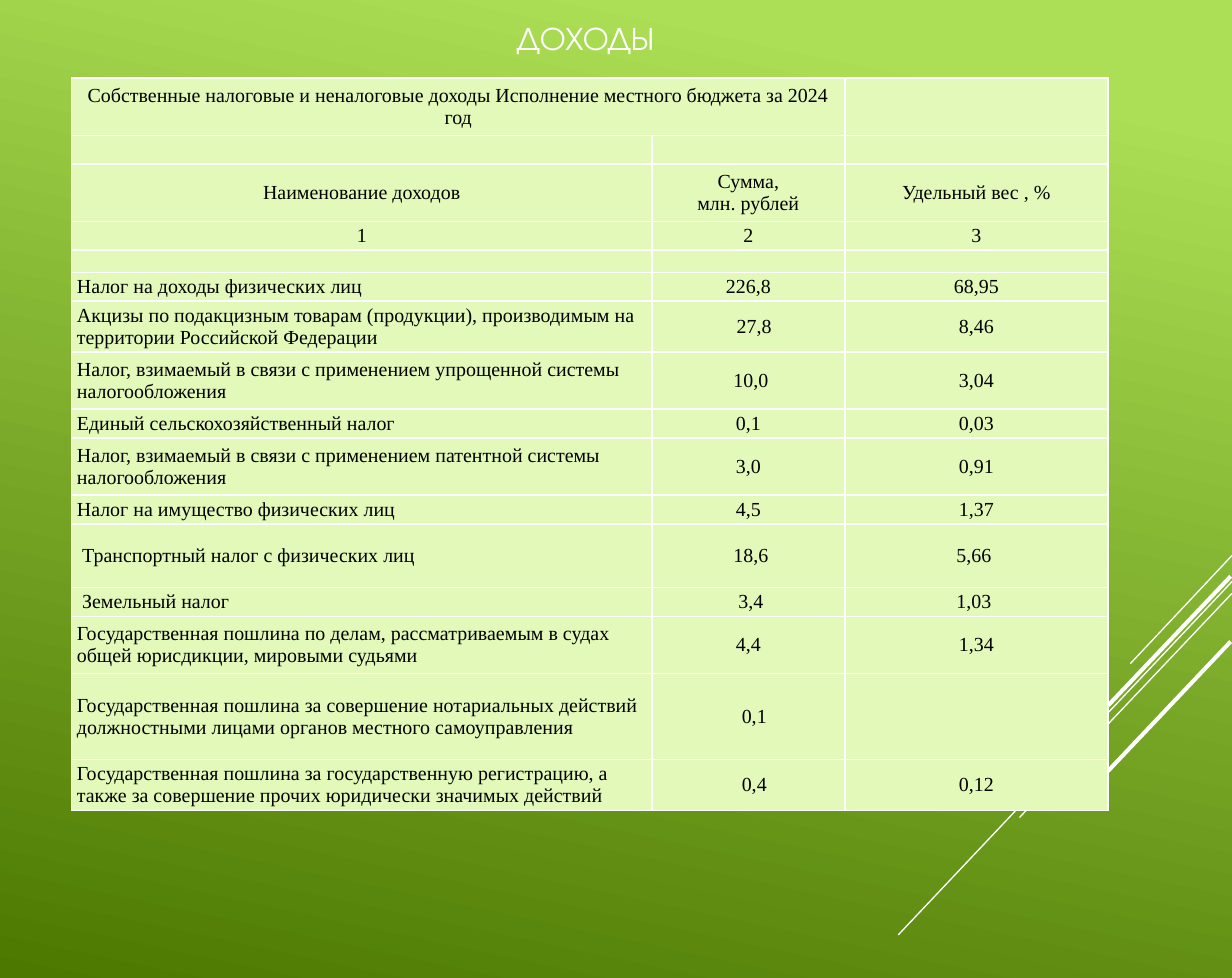
import dataclasses

import lxml.etree
import pptx
import pptx.dml.color
import pptx.enum.shapes
import pptx.enum.text
import pptx.oxml.ns
import pptx.util

Inches = pptx.util.Inches
Pt = pptx.util.Pt
ALIGN = pptx.enum.text.PP_ALIGN
MIDDLE = pptx.enum.text.MSO_ANCHOR.MIDDLE
qn = pptx.oxml.ns.qn


def rgb(value):
    return pptx.dml.color.RGBColor.from_string(value)


@dataclasses.dataclass(frozen=True)
class Theme:
    white: str = "FFFFFF"
    text: str = "000000"
    cell: str = "E2F9BA"
    light_green: str = "ACDF55"
    dark_green: str = "4C7800"
    title_font: str = "TeX Gyre Adventor"
    table_font: str = "Times New Roman"
    title_size: int = 18
    table_size: int = 11
    empty_size: int = 8


THEME = Theme()

COLUMN_WIDTHS = (4.45, 1.48, 2.02)
HEADER_ROWS = 5

# Row height, income name, sum, share
INCOME_ROWS = (
    (0.44, "Собственные налоговые и неналоговые доходы Исполнение местного бюджета за 2024 год", "", ""),
    (0.22, "", "", ""),
    (0.44, "Наименование доходов", "Сумма,\nмлн. рублей", "Удельный вес , %"),
    (0.22, "1", "2", "3"),
    (0.17, "", "", ""),
    (0.22, "Налог на доходы физических лиц", "226,8", "68,95"),
    (0.39, "Акцизы по подакцизным товарам (продукции), производимым на территории Российской Федерации", "27,8", "8,46"),
    (0.44, "Налог, взимаемый в связи с применением упрощенной системы налогообложения", "10,0", "3,04"),
    (0.22, "Единый сельскохозяйственный налог", "0,1", "0,03"),
    (0.44, "Налог, взимаемый в связи с применением патентной системы налогообложения", "3,0", "0,91"),
    (0.22, "Налог на имущество физических лиц", "4,5", "1,37"),
    (0.49, "Транспортный налог с физических лиц", "18,6", "5,66"),
    (0.22, "Земельный налог", "3,4", "1,03"),
    (0.44, "Государственная пошлина по делам, рассматриваемым в судах общей юрисдикции, мировыми судьями", "4,4", "1,34"),
    (0.66, "Государственная пошлина за совершение нотариальных действий должностными лицами органов местного самоуправления", "0,1", ""),
    (0.39, "Государственная пошлина за государственную регистрацию, а также за совершение прочих юридически значимых действий", "0,4", "0,12"),
)

# Left and right insets of cells set off from their column
NAME_INSET = (0.04, 0)
CELL_INSETS = {
    (7, 1): (0.04, 0),
    (11, 0): (0.08, 0), (11, 1): (0.04, 0), (11, 2): (0, 0.04),
    (12, 0): (0.08, 0), (12, 1): (0.04, 0), (12, 2): (0, 0.04),
}
# Sums that start at a fixed indent instead of being centred
SUM_INDENTS = {6: 0.65, 14: 0.69, 15: 0.69}

# Diagonal rays relative to the corner box: start x, y, end x, y, weight
RAYS = (
    (2.56, 0, 1.78, 0.83, 0.75),
    (2.56, 0.2, 0, 2.91, 0.75),
    (2.56, 0.29, 0.93, 2.01, 0.75),
    (2.55, 0.16, 1.06, 1.73, 2.25),
    (2.55, 0.66, 1.47, 1.8, 2.25),
)


def paint_background(slide):
    fill = slide.background.fill
    fill.gradient()
    fill.gradient_angle = 258
    stops = ((0.1, THEME.light_green), (1, THEME.dark_green))
    for stop, (position, color) in zip(fill.gradient_stops, stops):
        stop.position = position
        stop.color.rgb = rgb(color)


def draw_rays(slide, left, top):
    for x1, y1, x2, y2, weight in RAYS:
        ray = slide.shapes.add_connector(
            pptx.enum.shapes.MSO_CONNECTOR.STRAIGHT,
            Inches(left + x1), Inches(top + y1), Inches(left + x2), Inches(top + y2))
        ray.line.color.rgb = rgb(THEME.white)
        ray.line.width = Pt(weight)
        lxml.etree.SubElement(ray._element.spPr, qn("a:effectLst"))


def add_text(paragraph, text, font_name, size, color):
    for index, line in enumerate(text.split("\n")):
        if index:
            paragraph.add_line_break()
        run = paragraph.add_run()
        run.text = line
        run.font.name = font_name
        run.font.size = Pt(size)
        run.font.color.rgb = rgb(color)


def place_title(slide, left, top, width, height):
    title = slide.shapes.title
    title.left, title.top = Inches(left), Inches(top)
    title.width, title.height = Inches(width), Inches(height)
    frame = title.text_frame
    frame.word_wrap = True
    frame.vertical_anchor = MIDDLE
    frame.paragraphs[0].alignment = ALIGN.CENTER
    add_text(frame.paragraphs[0], "ДОХОДЫ", THEME.title_font, THEME.title_size, THEME.white)


def add_borders(cell):
    properties = cell._tc.get_or_add_tcPr()
    for index, side in enumerate(("a:lnL", "a:lnR", "a:lnT", "a:lnB")):
        border = lxml.etree.Element(qn(side), w=str(Pt(1)))
        solid = lxml.etree.SubElement(border, qn("a:solidFill"))
        lxml.etree.SubElement(solid, qn("a:srgbClr"), val=THEME.white)
        properties.insert(index, border)


def fill_cell(cell, row, column, text):
    cell.fill.solid()
    cell.fill.fore_color.rgb = rgb(THEME.cell)
    add_borders(cell)
    cell.vertical_anchor = MIDDLE
    is_name = column == 0 and row >= HEADER_ROWS
    is_indented = column == 1 and row in SUM_INDENTS
    left, right = CELL_INSETS.get((row, column), NAME_INSET if is_name else (0, 0))
    if is_indented:
        left = SUM_INDENTS[row]
    cell.margin_left, cell.margin_right = Inches(left), Inches(right)
    cell.margin_top = cell.margin_bottom = 0
    paragraph = cell.text_frame.paragraphs[0]
    paragraph.alignment = ALIGN.LEFT if is_name or is_indented else ALIGN.CENTER
    if text:
        add_text(paragraph, text, THEME.table_font, THEME.table_size, THEME.text)
    else:
        lxml.etree.SubElement(paragraph._p, qn("a:endParaRPr"), sz=str(THEME.empty_size * 100))


def build_income_table(slide, left, top):
    heights = [row[0] for row in INCOME_ROWS]
    income = slide.shapes.add_table(
        len(INCOME_ROWS), len(COLUMN_WIDTHS), Inches(left), Inches(top),
        Inches(sum(COLUMN_WIDTHS)), Inches(sum(heights))).table
    income.first_row = False
    income.horz_banding = False
    for column, width in zip(income.columns, COLUMN_WIDTHS):
        column.width = Inches(width)
    for row, (height, *texts) in enumerate(INCOME_ROWS):
        income.rows[row].height = Inches(height)
        for column, text in enumerate(texts):
            fill_cell(income.cell(row, column), row, column, text)
    # The heading spans the name and sum columns
    income.cell(0, 0).merge(income.cell(0, 1))


def main():
    deck = pptx.Presentation()
    deck.slide_width, deck.slide_height = Inches(9.45), Inches(7.5)
    slide = deck.slides.add_slide(deck.slide_layouts[5])
    paint_background(slide)
    draw_rays(slide, 6.89, 4.26)
    place_title(slide, 0.39, 0.13, 8.2, 0.32)
    build_income_table(slide, 0.55, 0.6)
    deck.save("out.pptx")


if __name__ == "__main__":
    main()
